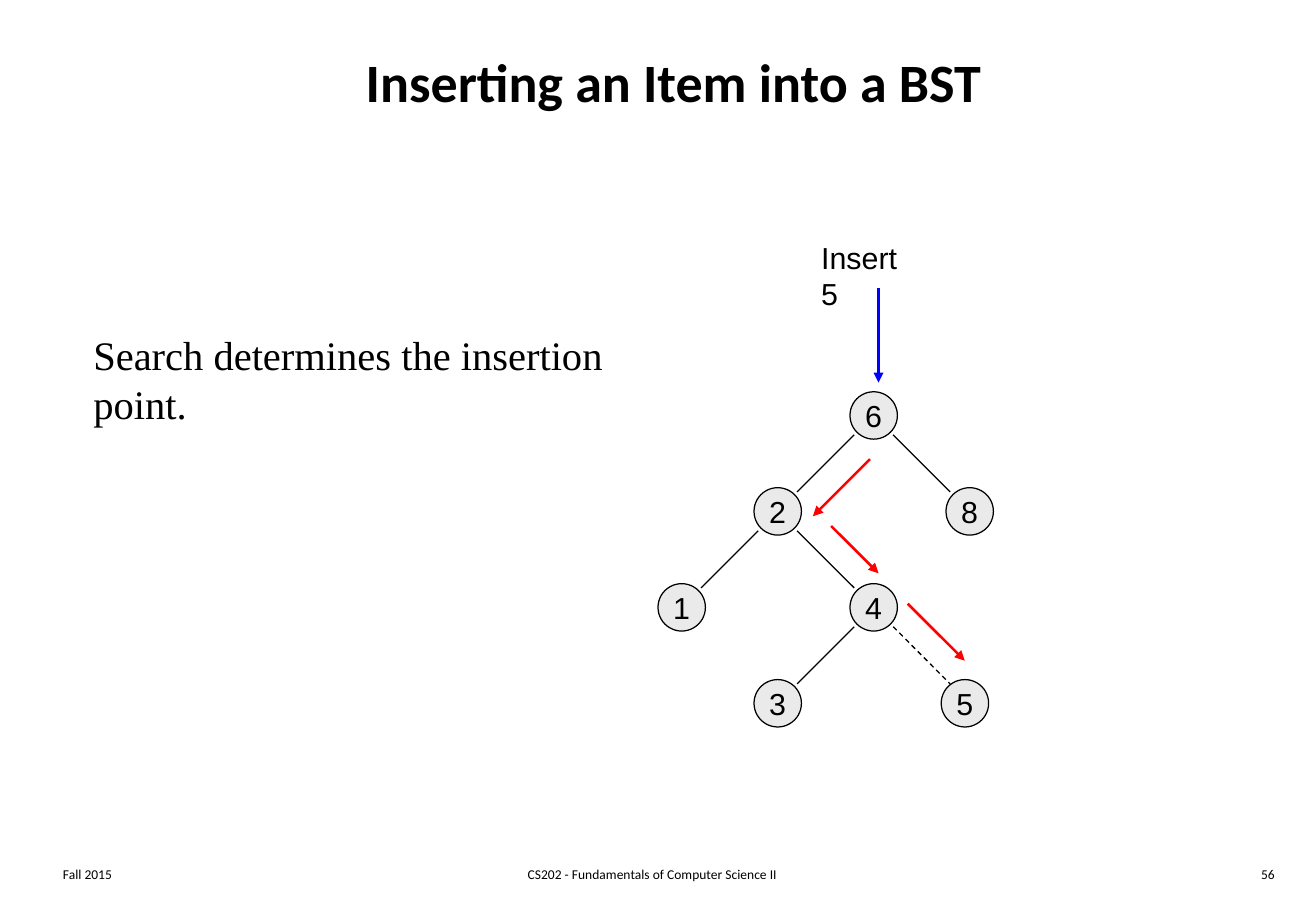
from lxml.etree import SubElement
from pptx import Presentation
from pptx.dml.color import RGBColor
from pptx.enum.dml import MSO_LINE
from pptx.enum.shapes import MSO_CONNECTOR, MSO_SHAPE
from pptx.enum.text import MSO_ANCHOR, PP_ALIGN
from pptx.oxml.ns import qn
from pptx.util import Inches, Pt

BLACK = RGBColor(0x00, 0x00, 0x00)
NODE_GREY = RGBColor(0xEA, 0xEA, 0xEA)
INSERT_BLUE = RGBColor(0x00, 0x00, 0xFF)
SEARCH_RED = RGBColor(0xFF, 0x00, 0x00)

NODE_SIZE = 0.39
LEVEL_STEP = 0.79
EDGE_GAP = 0.16
EDGE_SPAN = 0.47

# Key: (steps right of the root, levels below it)
NODES = {"6": (0, 0), "2": (-1, 1), "8": (1, 1), "1": (-2, 2),
         "4": (0, 2), "3": (-1, 3), "5": (0.95, 3)}
# Parent, direction of the child (-1 left, 1 right), is the link new
EDGES = [("6", -1, False), ("6", 1, False), ("2", -1, False),
         ("2", 1, False), ("4", -1, False), ("4", 1, True)]
# Node, start offset from its centre, direction, span
SEARCH_STEPS = [("6", -0.03, 0.36, -1, 0.47),
                ("2", 0.44, 0.12, 1, 0.39),
                ("4", 0.28, -0.03, 1, 0.47)]


def write(frame, text, font_name, size, align=PP_ALIGN.LEFT,
          anchor=MSO_ANCHOR.TOP, bold=False, wrap=True):
    frame.word_wrap = wrap
    frame.vertical_anchor = anchor
    paragraph = frame.paragraphs[0]
    paragraph.text = text
    paragraph.alignment = align
    paragraph.font.name = font_name
    paragraph.font.size = Pt(size)
    paragraph.font.bold = bold
    paragraph.font.color.rgb = BLACK


def add_text(slide, box, text, font_name, size, **style):
    label = slide.shapes.add_textbox(*map(Inches, box))
    write(label.text_frame, text, font_name, size, **style)


def add_line(slide, start, end, color=BLACK, width=0.75, dashed=False, arrow=False):
    line = slide.shapes.add_connector(
        MSO_CONNECTOR.STRAIGHT, *map(Inches, (*start, *end)))
    line.line.color.rgb = color
    line.line.width = Pt(width)
    if dashed:
        line.line.dash_style = MSO_LINE.DASH
    if arrow:
        SubElement(line.line._get_or_add_ln(), qn("a:tailEnd"), type="triangle")
    SubElement(line._element.spPr, qn("a:effectLst"))


def add_node(slide, center, key):
    x, y = center
    node = slide.shapes.add_shape(
        MSO_SHAPE.OVAL, Inches(x - NODE_SIZE / 2), Inches(y - NODE_SIZE / 2),
        Inches(NODE_SIZE), Inches(NODE_SIZE))
    node.shadow.inherit = False
    node.fill.solid()
    node.fill.fore_color.rgb = NODE_GREY
    node.line.color.rgb = BLACK
    node.line.width = Pt(0.75)
    write(node.text_frame, key, "Arial", 18, align=PP_ALIGN.CENTER,
          anchor=MSO_ANCHOR.MIDDLE, wrap=False)


def add_tree(slide, left, top):
    """Draw the tree in a box whose top left corner is given."""
    root_x, root_y = left + 1.77, top + 1.5
    centers = {key: (root_x + column * LEVEL_STEP, root_y + level * LEVEL_STEP)
               for key, (column, level) in NODES.items()}

    for key, center in centers.items():
        add_node(slide, center, key)

    # Links between parents and children
    for parent, side, is_new in EDGES:
        x, y = centers[parent]
        start = (x + side * EDGE_GAP, y + EDGE_GAP)
        end = (start[0] + side * EDGE_SPAN, start[1] + EDGE_SPAN)
        add_line(slide, start, end, dashed=is_new)

    # Inserted item
    add_text(slide, (left + 1.24, top, 1.03, 0.4), "Insert 5", "Arial", 18, wrap=False)
    add_line(slide, (left + 1.81, top + 0.45), (left + 1.81, top + 1.23),
             INSERT_BLUE, 1.5, arrow=True)

    # Search path
    for key, dx, dy, side, span in SEARCH_STEPS:
        x, y = centers[key][0] + dx, centers[key][1] + dy
        add_line(slide, (x, y), (x + side * span, y + span),
                 SEARCH_RED, 1.5, arrow=True)


def add_footer(slide, top, height):
    for left, width, text, align in [
            (0.42, 2.26, "Fall 2015", PP_ALIGN.LEFT),
            (3.34, 4.06, "CS202 - Fundamentals of Computer Science II", PP_ALIGN.CENTER),
            (8.33, 2.26, "56", PP_ALIGN.RIGHT)]:
        add_text(slide, (left, top, width, height), text, "Calibri", 8, align=align)


def main():
    deck = Presentation()
    deck.slide_width, deck.slide_height = Inches(10.83), Inches(7.5)
    slide = deck.slides.add_slide(deck.slide_layouts[6])

    add_text(slide, (0.42, 0.17, 10.25, 1), "Inserting an Item into a BST", "Calibri", 32,
             align=PP_ALIGN.CENTER, anchor=MSO_ANCHOR.MIDDLE, bold=True)
    add_text(slide, (0.67, 2.67, 5, 0.9), "Search determines the insertion point.",
             "Times New Roman", 24)
    add_tree(slide, left=5.42, top=1.92)
    add_footer(slide, top=7.08, height=0.25)

    deck.save("out.pptx")


if __name__ == "__main__":
    main()
